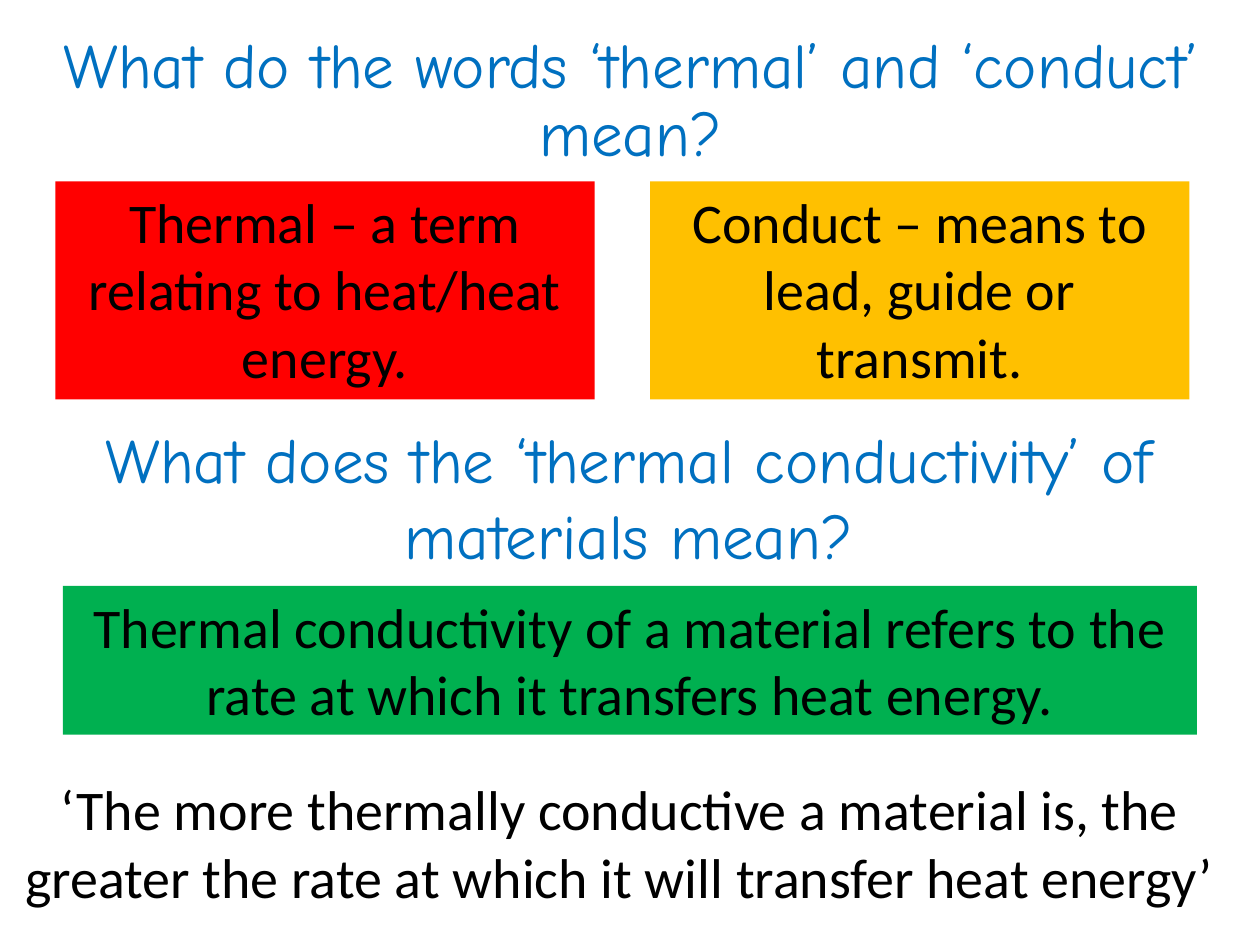
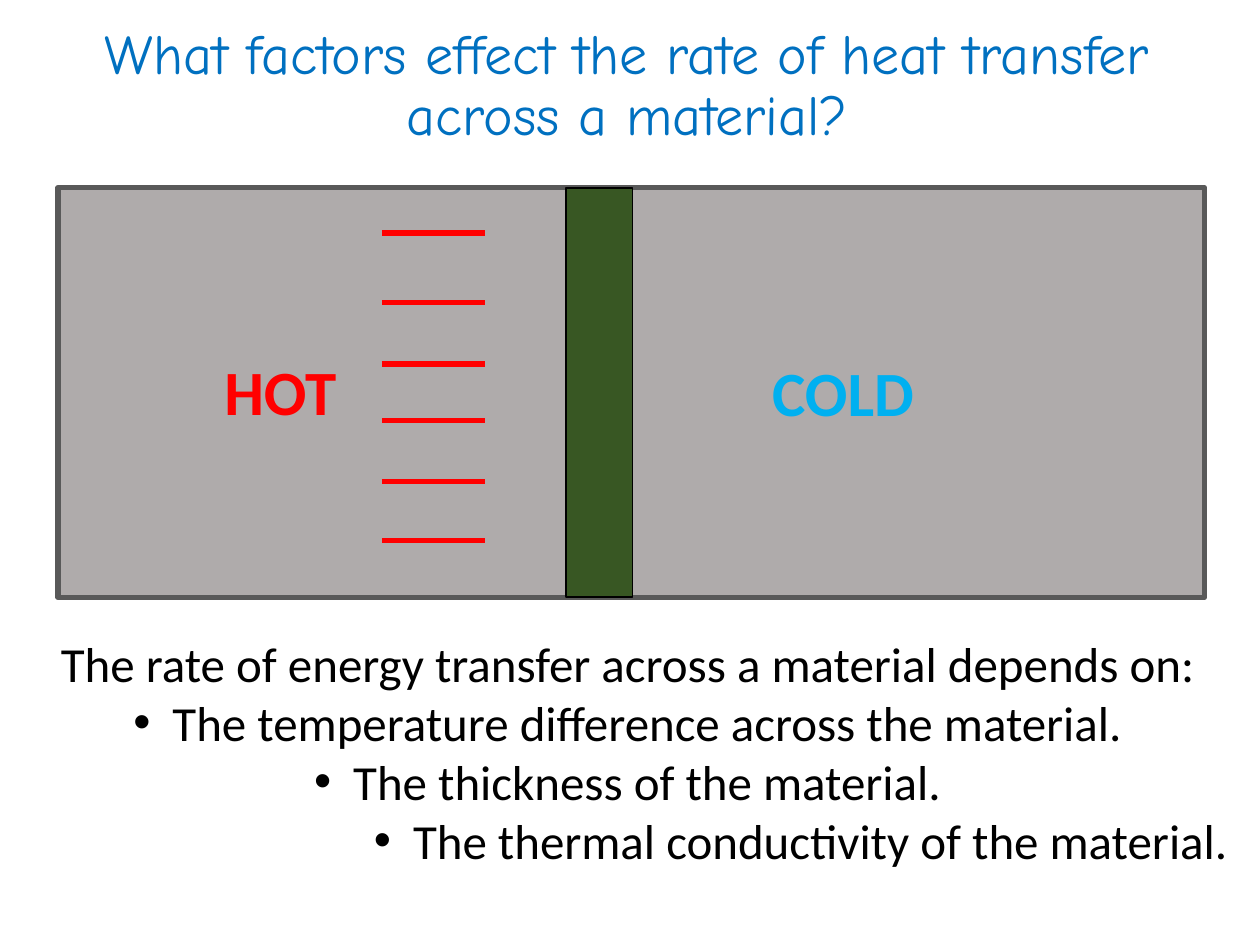
from dataclasses import dataclass

from lxml import etree
from pptx import Presentation
from pptx.dml.color import RGBColor
from pptx.enum.shapes import MSO_CONNECTOR, MSO_SHAPE
from pptx.enum.text import MSO_ANCHOR, MSO_AUTO_SIZE, PP_ALIGN
from pptx.oxml.ns import qn
from pptx.util import Inches, Pt

RECT, LINE = MSO_SHAPE.RECTANGLE, MSO_CONNECTOR.STRAIGHT
TOP, FIXED = MSO_ANCHOR.TOP, MSO_AUTO_SIZE.NONE
LEFT, MID, RIGHT = PP_ALIGN.LEFT, PP_ALIGN.CENTER, PP_ALIGN.RIGHT

BLACK = RGBColor(0x00, 0x00, 0x00)
BLUE = RGBColor(0x00, 0x70, 0xC0)
SKY = RGBColor(0x00, 0xB0, 0xF0)
RED = RGBColor(0xFF, 0x00, 0x00)
AMBER = RGBColor(0xFF, 0xC0, 0x00)
GREEN = RGBColor(0x00, 0xB0, 0x50)
MOSS = RGBColor(0x38, 0x57, 0x23)
GREY = RGBColor(0xAF, 0xAB, 0xAB)
SLATE = RGBColor(0x59, 0x59, 0x59)

WIDTH, HEIGHT = Inches(10), Inches(7.5)
COL, ROW = WIDTH / 100, HEIGHT / 75  # grid of 100 columns by 75 rows
INDENT = Inches(0.31)


@dataclass(frozen=True)
class Box:
    col: float
    row: float
    cols: float
    rows: float

    def place(self) -> tuple[int, int, int, int]:
        return (round(self.col * COL), round(self.row * ROW),
                round(self.cols * COL), round(self.rows * ROW))


@dataclass(frozen=True)
class Style:
    size: int
    color: RGBColor = BLACK
    face: str = "Calibri"
    bold: bool = False
    align: int = MID
    pitch: float = 1.0


HEAD = Style(36, BLUE, "Comic Neue", pitch=0.9)
SMALL = Style(32, BLUE, "Comic Neue", pitch=0.9)
ASK = Style(36, BLUE, "Comic Neue")
FACT = Style(32)
POINT = Style(28)
LAST = Style(28, align=RIGHT)
HOT = Style(36, RED, bold=True)
COLD = Style(36, SKY, bold=True, align=LEFT)


def format_par(par, text: str, style: Style) -> None:
    par.text = text
    par.alignment, par.line_spacing = style.align, style.pitch
    par.space_before = Pt(0)
    font = par.font
    font.name, font.size, font.bold = style.face, Pt(style.size), style.bold
    font.color.rgb = style.color


def write(shape, *items: tuple[str, Style]) -> None:
    """Fill a shape with one paragraph per item, from its top edge."""
    frame = shape.text_frame
    frame.word_wrap, frame.auto_size = True, FIXED
    frame.vertical_anchor = TOP
    for num, (text, style) in enumerate(items):
        par = frame.add_paragraph() if num else frame.paragraphs[0]
        format_par(par, text, style)


def move(shape, box: Box) -> None:
    shape.left, shape.top, shape.width, shape.height = box.place()


def add_title(slide, box: Box, text: str, style: Style) -> None:
    move(slide.shapes.title, box)
    write(slide.shapes.title, (text, style))


def add_text(slide, box: Box, text: str, style: Style) -> None:
    write(slide.shapes.add_textbox(*box.place()), (text, style))


def add_block(slide, box: Box, fill: RGBColor, edge: RGBColor | None = None,
              width: float = 0):
    block = slide.shapes.add_shape(RECT, *box.place())
    block.shadow.inherit = False
    block.fill.solid()
    block.fill.fore_color.rgb = fill
    if edge is None:
        block.line.fill.background()
    else:
        block.line.color.rgb, block.line.width = edge, Pt(width)
    return block


def add_ray(slide, start: float, end: float, row: float) -> None:
    y = round(row * ROW)
    ray = slide.shapes.add_connector(LINE, round(start * COL), y,
                                     round(end * COL), y)
    ray.line.color.rgb, ray.line.width = RED, Pt(3)
    etree.SubElement(ray._element.spPr, qn("a:effectLst"))


def set_bullet(par, shown: bool) -> None:
    props = par._p.get_or_add_pPr()
    gap = INDENT if shown else 0
    props.set("marL", str(gap))
    props.set("indent", str(-gap))
    if shown:
        font = etree.SubElement(props, qn("a:buFont"))
        font.set("typeface", "Arial")
        etree.SubElement(props, qn("a:buChar")).set("char", "•")
    else:
        etree.SubElement(props, qn("a:buNone"))


def add_list(slide, box: Box, *items: tuple[str, Style]) -> None:
    """Put a plain lead line and its bullets in the body placeholder."""
    body = slide.placeholders[1]
    move(body, box)
    write(body, *items)
    for num, par in enumerate(body.text_frame.paragraphs):
        # Bullet marks must come before the paragraph's default font
        props = par._p.get_or_add_pPr()
        font = props.find(qn("a:defRPr"))
        set_bullet(par, num > 0)
        if font is not None:
            props.append(font)


def build_terms(deck) -> None:
    slide = deck.slides.add_slide(deck.slide_layouts[5])
    add_title(slide, Box(2, 2.2, 96.1, 13.5),
              "What do the words ‘thermal’ and ‘conduct’ mean?", HEAD)
    add_text(slide, Box(4.9, 32.9, 90, 13.5),
             "What does the ‘thermal conductivity’ of materials mean?", ASK)
    facts = (
        (Box(5, 46.5, 90, 11.8), GREEN,
         "Thermal conductivity of a material refers to the rate at which "
         "it transfers heat energy."),
        (Box(4.4, 14.4, 42.8, 17.3), RED,
         "Thermal – a term relating to heat/heat energy."),
        (Box(51.6, 14.4, 42.8, 17.3), AMBER,
         "Conduct – means to lead, guide or transmit."),
    )
    for box, fill, text in facts:
        write(add_block(slide, box, fill), (text, FACT))
    add_text(slide, Box(0.2, 61, 98, 11.8),
             "‘The more thermally conductive a material is, the greater "
             "the rate at which it will transfer heat energy’", FACT)


def build_rate(deck) -> None:
    slide = deck.slides.add_slide(deck.slide_layouts[1])
    add_title(slide, Box(1.2, 1.6, 97.2, 11),
              "What factors effect the rate of heat transfer across a "
              "material?", SMALL)
    add_list(
        slide, Box(1.2, 49.8, 97.2, 19.9),
        ("The rate of energy transfer across a material depends on:", POINT),
        ("The temperature difference across the material.", POINT),
        ("The thickness of the material.", POINT),
        ("The thermal conductivity of the material.", LAST))
    add_block(slide, Box(4.6, 14.9, 91, 32.5), GREY, SLATE, 3)
    add_block(slide, Box(44.9, 14.9, 5.3, 32.5), MOSS, BLACK, 1)
    add_text(slide, Box(13.2, 27.5, 18.1, 7.1), "HOT", HOT)
    add_text(slide, Box(60.3, 27.6, 18.1, 7.1), "COLD", COLD)
    for row in (18.5, 24, 28.9, 33.4, 38.2, 42.9):
        add_ray(slide, 30.3, 38.5, row)


def main() -> None:
    deck = Presentation()
    deck.slide_width, deck.slide_height = WIDTH, HEIGHT
    build_terms(deck)
    build_rate(deck)
    deck.save("out.pptx")


if __name__ == "__main__":
    main()
